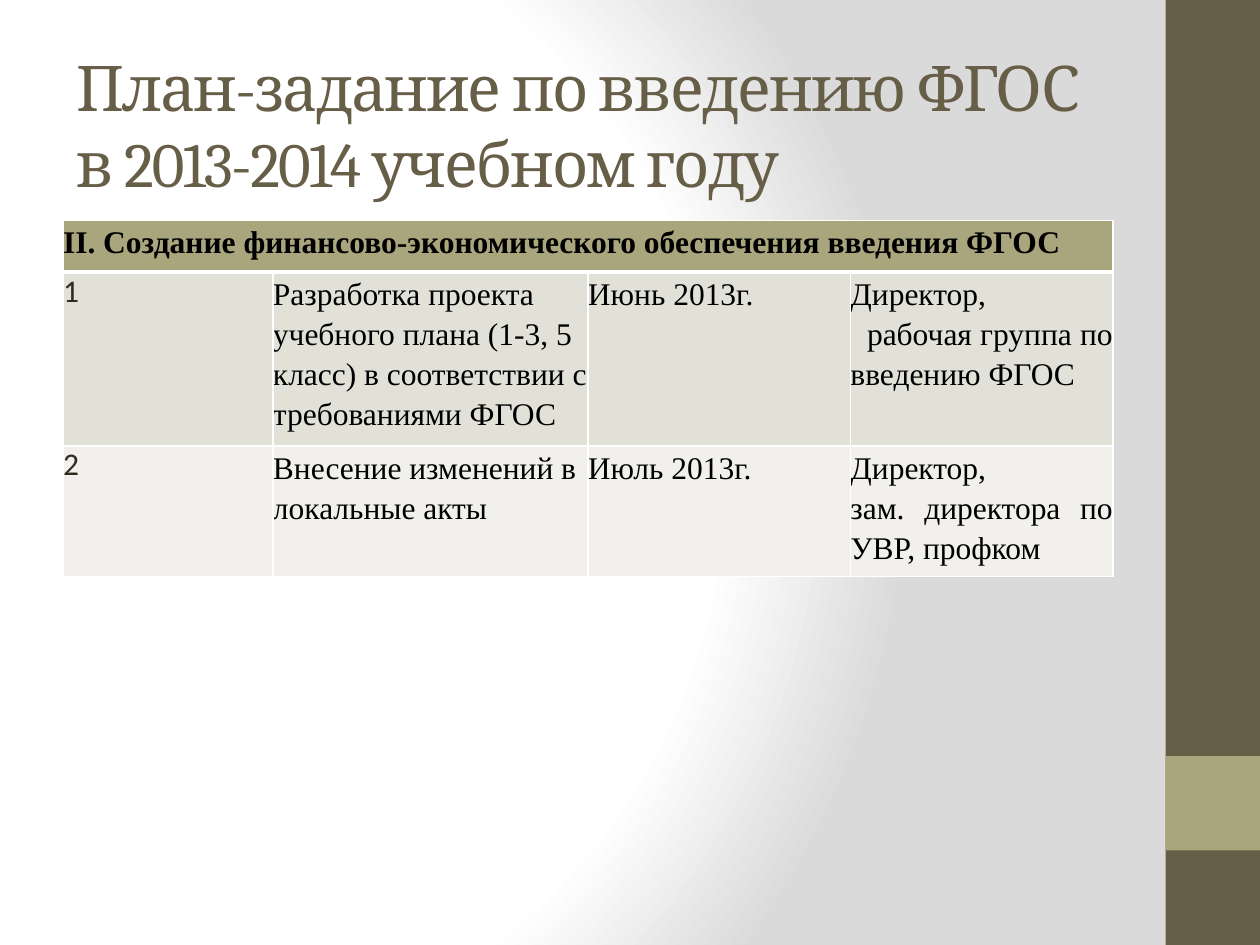
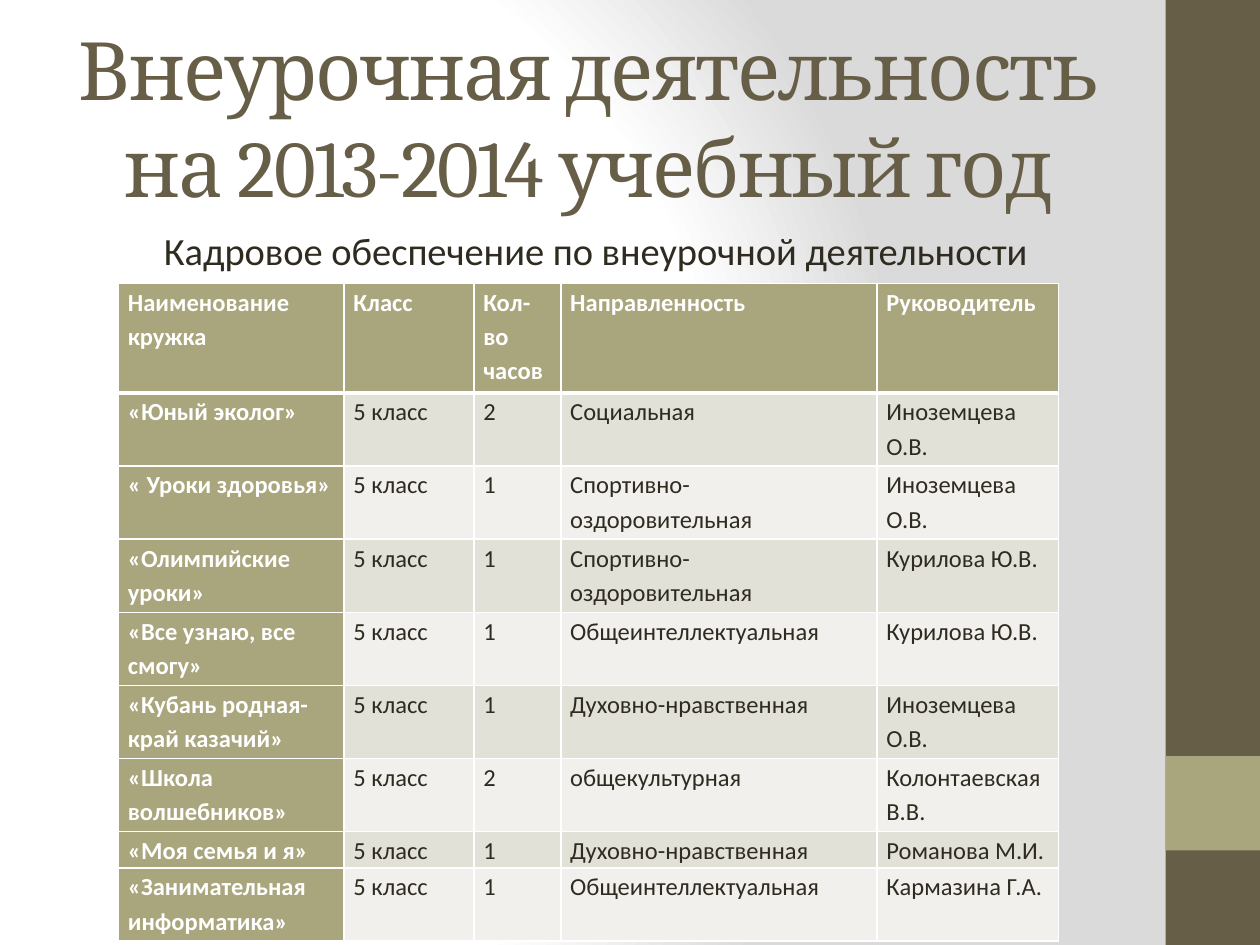
from dataclasses import dataclass
from typing import Callable, Optional

from lxml import etree
from pptx import Presentation
from pptx import util as u
from pptx.dml.color import RGBColor
from pptx.enum import shapes, text
from pptx.oxml.ns import qn

Pt = u.Pt
ALIGN = text.PP_ALIGN


# Theme: colours, fonts and sizes shared by both slides
@dataclass(frozen=True)
class Theme:
    brown: str = "675E47"
    olive: str = "A9A57C"
    ink: str = "2F2B20"
    black: str = "000000"
    white: str = "FFFFFF"
    glow_edge: str = "DADADA"
    row_tints: tuple = ("E2E1D7", "F1F0EC")
    title_font: str = "Cambria"
    body_font: str = "Calibri"
    plan_font: str = "Times New Roman"
    plan_title_size: float = 36
    clubs_title_size: float = 46
    subtitle_size: float = 22
    plan_size: float = 18
    clubs_size: float = 14
    thin_line: float = 1
    header_line: float = 3
    line_spacing: float = 1.15


THEME = Theme()


@dataclass(frozen=True)
class Box:
    left: float
    top: float
    width: float
    height: float

    def points(self) -> tuple:
        return tuple(Pt(v) for v in (self.left, self.top, self.width, self.height))


@dataclass(frozen=True)
class Style:
    font: str
    size: float
    color: str
    bold: bool = False
    align: Optional[ALIGN] = None
    line_spacing: Optional[float] = None
    tracking: int = 0


@dataclass(frozen=True)
class Grid:
    left: float
    top: float
    widths: tuple
    heights: tuple
    side_margin: float
    rows: tuple
    style_at: Callable
    label_column: bool = False
    merged_header: bool = False


BANDS = (
    (Box(666, 0, 54, 540), THEME.brown),
    (Box(666, 432, 54, 54), THEME.olive),
)

# Slide 1 content
PLAN_ROWS = (
    ("II. Создание финансово-экономического обеспечения введения ФГОС", "", "", ""),
    ("1", "Разработка проекта учебного плана (1-3, 5 класс) в соответствии с требованиями ФГОС",
     "Июнь 2013г.", "Директор,\n  рабочая группа по введению ФГОС"),
    ("2", "Внесение изменений в локальные акты",
     "Июль 2013г.", "Директор,\nзам. директора по УВР, профком"),
)

# Slide 2 content
CLUB_ROWS = (
    ("Наименование кружка", "Класс", "Кол-во часов", "Направленность", "Руководитель"),
    ("«Юный эколог»", "5 класс", "2", "Социальная", "Иноземцева О.В."),
    ("« Уроки здоровья»", "5 класс", "1", "Спортивно-оздоровительная", "Иноземцева О.В."),
    ("«Олимпийские уроки»", "5 класс", "1", "Спортивно-оздоровительная", "Курилова Ю.В."),
    ("«Все узнаю, все смогу»", "5 класс", "1", "Общеинтеллектуальная", "Курилова Ю.В."),
    ("«Кубань родная-край казачий»", "5 класс", "1", "Духовно-нравственная", "Иноземцева О.В."),
    ("«Школа волшебников»", "5 класс", "2", "общекультурная", "Колонтаевская В.В."),
    ("«Моя семья и я»", "5 класс", "1", "Духовно-нравственная", "Романова М.И."),
    ("«Занимательная информатика»", "5 класс", "1", "Общеинтеллектуальная", "Кармазина Г.А."),
)
CLUB_LINE = 20.88
CLUB_LINE_COUNTS = (3, 2, 2, 2, 2, 2, 2, 1, 2)


def plan_style(row: int, column: int) -> Style:
    if row and column == 0:
        return Style(THEME.body_font, THEME.plan_size, THEME.ink)
    align = ALIGN.JUSTIFY if row and column == 3 else None
    return Style(THEME.plan_font, THEME.plan_size, THEME.black, row == 0, align,
                 THEME.line_spacing)


def club_style(row: int, column: int) -> Style:
    heading = row == 0 or column == 0
    return Style(THEME.body_font, THEME.clubs_size, THEME.white if heading else THEME.ink,
                 heading, line_spacing=THEME.line_spacing)


PLAN = Grid(36, 126, (120, 180, 150, 150), (29.5,) * 3, 0, PLAN_ROWS, plan_style,
            merged_header=True)
CLUBS = Grid(67.7, 162, (128.9, 74.2, 49.7, 180.7, 103.7),
             tuple(CLUB_LINE * count for count in CLUB_LINE_COUNTS), 5.4, CLUB_ROWS,
             club_style, label_column=True)


# Drawing functions
def write(frame, wording: str, style: Style) -> None:
    frame.text = wording
    for paragraph in frame.paragraphs:
        paragraph.alignment = style.align
        paragraph.line_spacing = style.line_spacing
        for run in paragraph.runs:
            run.font.name = style.font
            run.font.size = Pt(style.size)
            run.font.bold = style.bold
            run.font.color.rgb = RGBColor.from_string(style.color)
            if style.tracking:
                run.font._element.set("spc", str(style.tracking * 100))


def add_text(slide, box: Box, wording: str, style: Style, anchor):
    frame = slide.shapes.add_textbox(*box.points()).text_frame
    frame.word_wrap = True
    frame.vertical_anchor = anchor
    write(frame, wording, style)
    return frame


def add_title(slide, top: float, wording: str, size: float, align=None) -> None:
    style = Style(THEME.title_font, size, THEME.brown, align=align, tracking=-1)
    add_text(slide, Box(36.36, top, 600, 90), wording, style, text.MSO_ANCHOR.MIDDLE)


def set_borders(cell, widths: dict) -> None:
    properties = cell._tc.get_or_add_tcPr()
    for index, (side, width) in enumerate(widths.items()):
        line = etree.Element(qn(f"a:ln{side}"), w=str(Pt(width)))
        fill = etree.SubElement(line, qn("a:solidFill"))
        etree.SubElement(fill, qn("a:srgbClr"), val=THEME.white)
        properties.insert(index, line)


def add_grid(slide, grid: Grid) -> None:
    box = Box(grid.left, grid.top, sum(grid.widths), sum(grid.heights))
    table = slide.shapes.add_table(len(grid.heights), len(grid.widths), *box.points()).table
    for column, width in zip(table.columns, grid.widths):
        column.width = Pt(width)
    for row, height in zip(table.rows, grid.heights):
        row.height = Pt(height)
    if grid.merged_header:
        table.cell(0, 0).merge(table.cell(0, len(grid.widths) - 1))

    for r, row in enumerate(grid.rows):
        for c, wording in enumerate(row):
            cell = table.cell(r, c)
            cell.margin_left = cell.margin_right = Pt(grid.side_margin)
            cell.margin_top = cell.margin_bottom = 0
            heading = r == 0 or (grid.label_column and c == 0)
            tint = THEME.olive if heading else THEME.row_tints[(r - 1) % 2]
            cell.fill.solid()
            cell.fill.fore_color.rgb = RGBColor.from_string(tint)
            set_borders(cell, {
                "L": THEME.thin_line,
                "R": THEME.thin_line,
                "T": THEME.header_line if r == 1 else THEME.thin_line,
                "B": THEME.header_line if r == 0 else THEME.thin_line,
            })
            if wording:
                write(cell.text_frame, wording, grid.style_at(r, c))


def set_background(master) -> None:
    master.background.fill.gradient()
    gradient = next(master._element.iter(qn("a:gradFill")))
    for child in list(gradient):
        gradient.remove(child)
    stops = etree.SubElement(gradient, qn("a:gsLst"))
    for percent, color in ((0, THEME.white), (75, THEME.white), (100, THEME.glow_edge)):
        stop = etree.SubElement(stops, qn("a:gs"), pos=str(percent * 1000))
        etree.SubElement(stop, qn("a:srgbClr"), val=color)
    circle = etree.SubElement(gradient, qn("a:path"), path="circle")
    etree.SubElement(circle, qn("a:fillToRect"), l="20000", t="50000", r="100000", b="50000")


def new_slide(deck):
    slide = deck.slides.add_slide(deck.slide_layouts[6])
    for box, color in BANDS:
        band = slide.shapes.add_shape(shapes.MSO_SHAPE.RECTANGLE, *box.points())
        band.shadow.inherit = False
        band.fill.solid()
        band.fill.fore_color.rgb = RGBColor.from_string(color)
        band.line.fill.background()
    return slide


def main() -> None:
    deck = Presentation()
    deck.slide_width, deck.slide_height = Pt(720), Pt(540)
    set_background(deck.slide_master)

    # Slide 1: plan of tasks
    plan = new_slide(deck)
    add_title(plan, 26, "План-задание по введению ФГОС в 2013-2014 учебном году",
              THEME.plan_title_size)
    add_grid(plan, PLAN)

    # Slide 2: clubs and their leaders
    clubs = new_slide(deck)
    add_title(clubs, 21.6, "Внеурочная деятельность на 2013-2014 учебный год",
              THEME.clubs_title_size, ALIGN.CENTER)
    subtitle = add_text(clubs, Box(36, 126, 600, 378),
                        "Кадровое обеспечение по внеурочной деятельности",
                        Style(THEME.body_font, THEME.subtitle_size, THEME.ink,
                              align=ALIGN.CENTER), text.MSO_ANCHOR.TOP)
    subtitle.paragraphs[0].space_before = Pt(4.4)
    subtitle.paragraphs[0]._p.get_or_add_pPr().set("marL", str(Pt(9)))
    add_grid(clubs, CLUBS)

    deck.save("out.pptx")


if __name__ == "__main__":
    main()
